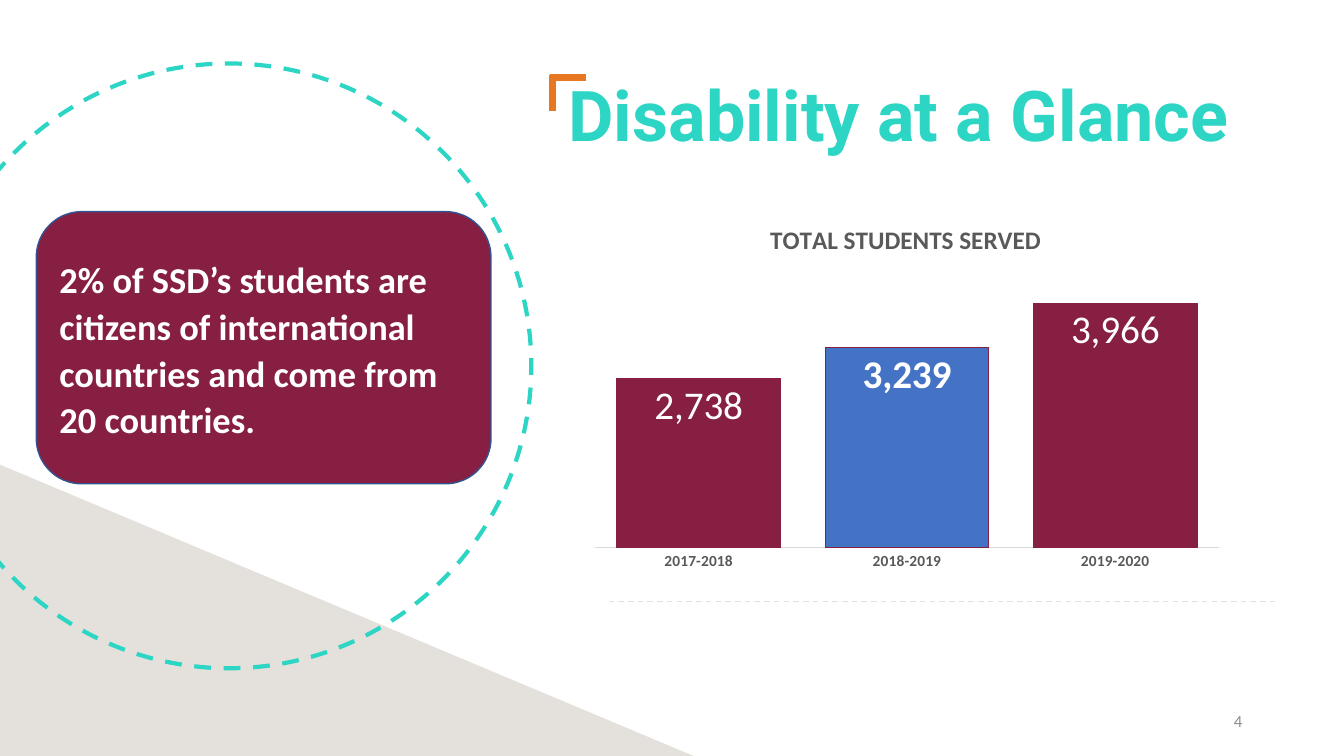
"""Build the "Disability at a Glance" slide."""
import dataclasses

import pptx
import pptx.chart.data
import pptx.dml.color
import pptx.enum.chart
import pptx.enum.dml
import pptx.enum.shapes
import pptx.enum.text
import pptx.oxml
import pptx.oxml.ns
import pptx.util

Inches = pptx.util.Inches
Pt = pptx.util.Pt
SHAPE = pptx.enum.shapes.MSO_SHAPE
ALIGN = pptx.enum.text.PP_ALIGN


@dataclasses.dataclass(frozen=True)
class Theme:
    """Colours, fonts and type sizes of the slide."""
    maroon: str = "861F41"
    blue: str = "4472C4"
    outline: str = "325491"
    teal: str = "2CD5C4"
    orange: str = "E87722"
    sand: str = "E4E1DC"
    axis: str = "D9D9D9"
    grey: str = "595959"
    page_grey: str = "8C8C8C"
    white: str = "FFFFFF"
    body_font: str = "Calibri"
    title_font: str = "Roboto"
    title: int = 50
    value: int = 28
    quote: int = 26
    chart_title: int = 18
    page_number: int = 12
    category: int = 11


THEME = Theme()


def colour(code):
    """Turn a hex code into a colour."""
    return pptx.dml.color.RGBColor.from_string(code)


def style_font(font, size, code, bold=False, name=THEME.body_font):
    """Set the face, size, colour and weight of a font."""
    font.name, font.size, font.bold = name, Pt(size), bold
    font.color.rgb = colour(code)


def style_line(line, code, width, dashed=False):
    """Set the colour, width and dash of a line."""
    line.color.rgb = colour(code)
    line.width = Pt(width)
    if dashed:
        line.dash_style = pptx.enum.dml.MSO_LINE.DASH


def add_figure(page, kind, place, fill=None):
    """Add a preset shape without shadow or outline."""
    figure = page.shapes.add_shape(kind, *map(Inches, place))
    figure.shadow.inherit = False
    figure.line.fill.background()
    if fill:
        figure.fill.solid()
        figure.fill.fore_color.rgb = colour(fill)
    else:
        figure.fill.background()
    return figure


def add_rule(page, ends, code, width, dashed=False):
    """Add a straight line between two points."""
    rule = page.shapes.add_connector(
        pptx.enum.shapes.MSO_CONNECTOR.STRAIGHT, *map(Inches, ends))
    style_line(rule.line, code, width, dashed)
    effects = pptx.oxml.parse_xml(
        "<a:effectLst %s/>" % pptx.oxml.ns.nsdecls("a"))
    rule._element.spPr.append(effects)


def write(box, text, align=ALIGN.LEFT, spacing=1.0, **font):
    """Write one vertically centred paragraph in a box."""
    frame = box.text_frame
    frame.word_wrap = True
    frame.vertical_anchor = pptx.enum.text.MSO_ANCHOR.MIDDLE
    frame.text = text
    para = frame.paragraphs[0]
    para.alignment, para.line_spacing = align, spacing
    style_font(para.runs[0].font, **font)


def add_text(page, place, text, **style):
    """Add a text box."""
    write(page.shapes.add_textbox(*map(Inches, place)), text, **style)


def layout_xml(target="", **values):
    """Make a manual chart layout from fractions of the chart."""
    if target:
        target = '<c:layoutTarget val="%s"/>' % target
    modes = "".join('<c:%sMode val="edge"/>' % key for key in "xy")
    sizes = "".join('<c:%s val="%s"/>' % item for item in values.items())
    return pptx.oxml.parse_xml(
        "<c:layout %s><c:manualLayout>%s%s%s</c:manualLayout></c:layout>"
        % (pptx.oxml.ns.nsdecls("c"), target, modes, sizes))


def set_layout(parent, layout, index):
    """Replace the layout of a chart part."""
    for old in parent.findall(pptx.oxml.ns.qn("c:layout")):
        parent.remove(old)
    parent.insert(index, layout)


def style_axes(chart):
    """Show category names only and hide the value scale."""
    categories, values = chart.category_axis, chart.value_axis
    no_tick = pptx.enum.chart.XL_TICK_MARK.NONE
    categories.major_tick_mark = categories.minor_tick_mark = no_tick
    style_font(categories.tick_labels.font, THEME.category, THEME.grey, True)
    style_line(categories.format.line, THEME.axis, 0.75)
    values.minimum_scale, values.maximum_scale = 0, 4500
    values.has_major_gridlines = False
    values.visible = False


def style_bars(plot, highlight):
    """Colour the bars and set a value label inside each."""
    plot.gap_width, plot.overlap = 27, -6
    plot.vary_by_categories = False
    series = plot.series[0]
    labels = series.data_labels
    labels.show_value = True
    labels.number_format, labels.number_format_is_linked = "#,##0", False
    for index in range(len(series.values)):
        chosen = index == highlight
        point = series.points[index]
        point.format.fill.solid()
        point.format.fill.fore_color.rgb = colour(
            THEME.blue if chosen else THEME.maroon)
        style_line(point.format.line, THEME.maroon, 0.75)
        style_font(point.data_label.font, THEME.value, THEME.white, chosen)
        point.data_label.position = (
            pptx.enum.chart.XL_LABEL_POSITION.INSIDE_END)


def add_students_chart(page, place):
    """Add the column chart of students served."""
    data = pptx.chart.data.CategoryChartData(number_format="#,##0")
    data.categories = ["2017-2018", "2018-2019", "2019-2020"]
    data.add_series("Series 1", [2738, 3239, 3966])
    chart = page.shapes.add_chart(
        pptx.enum.chart.XL_CHART_TYPE.COLUMN_CLUSTERED,
        *map(Inches, place), data).chart
    chart.has_legend = False
    chart.font.name = THEME.body_font
    chart.has_title = True
    frame = chart.chart_title.text_frame
    frame.text = "TOTAL STUDENTS SERVED"
    style_font(frame.paragraphs[0].runs[0].font,
               THEME.chart_title, THEME.grey, True)
    set_layout(chart.chart_title._element, layout_xml(x=0.29, y=0.05), 1)
    plot_area = chart._chartSpace.chart.plotArea
    set_layout(plot_area,
               layout_xml("inner", x=0.033, y=0.186, w=0.939, h=0.721), 0)
    style_axes(chart)
    style_bars(chart.plots[0], highlight=1)


def main():
    """Build and save the slide."""
    deck = pptx.Presentation()
    deck.slide_width, deck.slide_height = Inches(13.33), Inches(7.5)
    page = deck.slides.add_slide(deck.slide_layouts[6])

    add_rule(page, (12.65, 5.97, 6, 5.97), THEME.sand, 1, dashed=True)
    add_figure(page, SHAPE.RIGHT_TRIANGLE, (0, 4.61, 6.88, 2.89), THEME.sand)
    ring = add_figure(page, SHAPE.OVAL, (-0.73, 0.63, 6, 6))
    style_line(ring.line, THEME.teal, 3, dashed=True)
    for ends in ((5.48, 0.74, 5.48, 1.1), (5.45, 0.77, 5.81, 0.77)):
        add_rule(page, ends, THEME.orange, 4.5)
    add_text(page, (9.42, 6.95, 3, 0.4), "4", align=ALIGN.RIGHT,
             size=THEME.page_number, code=THEME.page_grey)
    add_students_chart(page, (5.68, 1.97, 6.6, 3.82))
    add_text(page, (5.54, 0.32, 7.6, 1.72), "Disability at a Glance",
             spacing=0.9, size=THEME.title, code=THEME.teal, bold=True,
             name=THEME.title_font)
    card = add_figure(page, SHAPE.ROUNDED_RECTANGLE,
                      (0.36, 2.1, 4.51, 2.7), THEME.maroon)
    style_line(card.line, THEME.outline, 1)
    write(card, "2% of SSD’s students are citizens of international "
          "countries and come from 20 countries.", spacing=1.07,
          size=THEME.quote, code=THEME.white, bold=True)
    deck.save("out.pptx")


if __name__ == "__main__":
    main()
